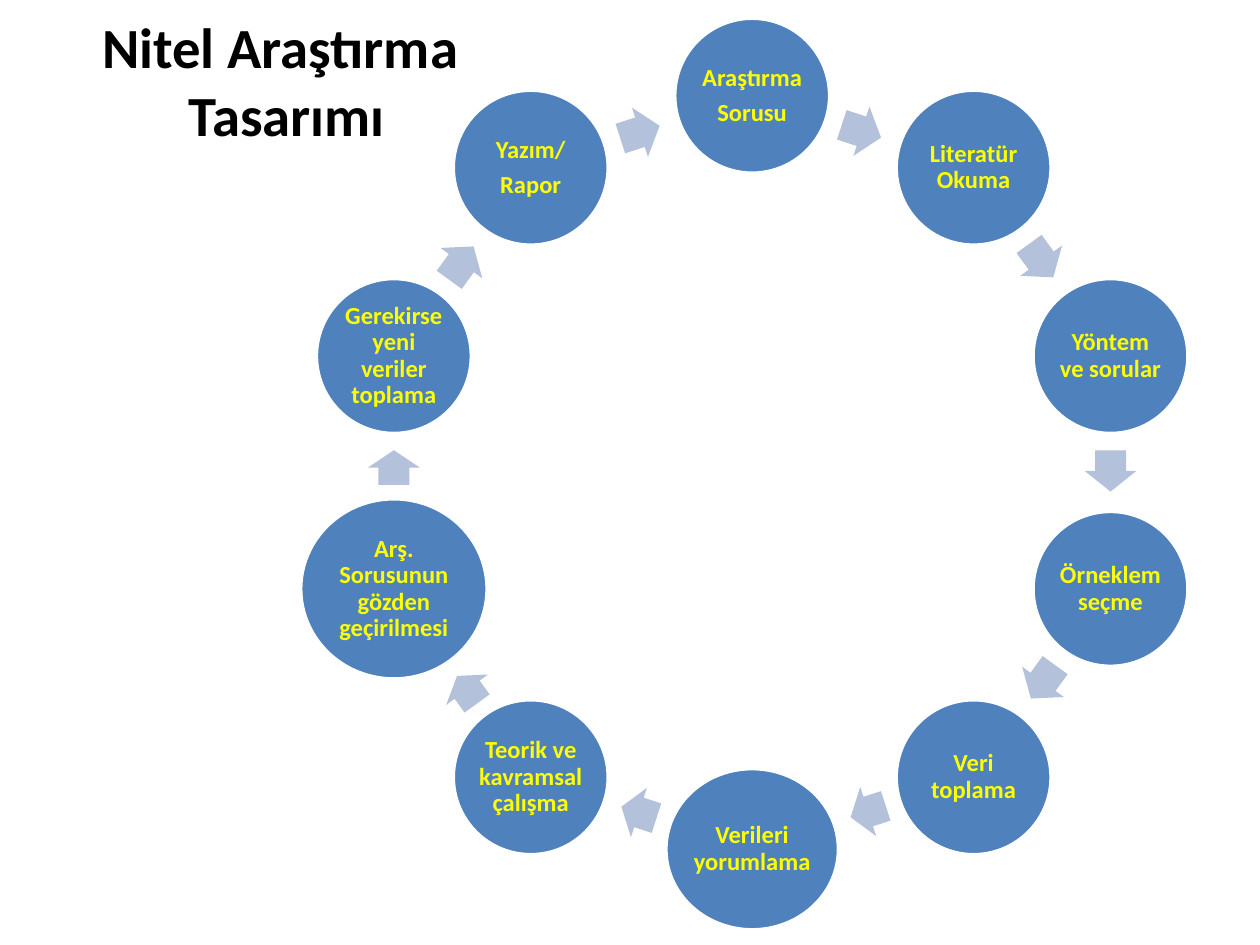
import math
from pptx import Presentation, util as u
from pptx.dml.color import RGBColor
from pptx.enum import shapes, text

COLORS = {"title": "000000", "node": "4F81BD", "rim": "FFFFFF",
          "label": "FFFF00", "arrow": "B3C1DB"}

prs = Presentation()
prs.slide_width, prs.slide_height = u.Inches(10), u.Inches(7.5)
W, H = prs.slide_width, prs.slide_height
s = prs.slides.add_slide(prs.slide_layouts[6])


def write(sp, paragraphs, inset, para_format, font_format, color):
    """Fill a shape with centred bold paragraphs, anchored in the middle."""
    tf = sp.text_frame
    frame = {"word_wrap": True, "vertical_anchor": text.MSO_ANCHOR.MIDDLE}
    for side in ("left", "right", "top", "bottom"):
        frame["margin_" + side] = u.Inches(inset)
    for name, value in frame.items():
        setattr(tf, name, value)
    tf.text = "\n".join(paragraphs)
    for p in tf.paragraphs:
        p.alignment = text.PP_ALIGN.CENTER
        for name, value in para_format.items():
            setattr(p, name, value)
        for r in p.runs:
            for name, value in {"name": "Calibri", "bold": True, **font_format}.items():
                setattr(r.font, name, value)
            r.font.color.rgb = RGBColor.from_string(COLORS[color])


def add_filled(kind, cx, cy, w, h, color):
    """Add a flat preset shape around its centre point."""
    sp = s.shapes.add_shape(kind, *(round(v) for v in (cx - w / 2, cy - h / 2, w, h)))
    sp.shadow.inherit = False
    sp.fill.solid()
    sp.fill.fore_color.rgb = RGBColor.from_string(COLORS[color])
    sp.line.fill.background()
    return sp


# Title
title = s.shapes.add_textbox(0, round(0.028 * H), round(0.455 * W), round(0.113 * H))
write(title, ["Nitel Araştırma \vTasarımı"], 0.05, {}, {"size": u.Pt(32.4)}, "title")

# Steps of the cycle, clockwise from the top: paragraphs, width and height
# as shares of the slide width
STEP = 0.123
steps = [
    (["Araştırma", "Sorusu"], STEP, STEP),
    (["Literatür Okuma"], STEP, STEP),
    (["Yöntem ve sorular"], STEP, STEP),
    (["Örneklem seçme"], STEP, STEP),
    (["Veri toplama"], STEP, STEP),
    (["Verileri yorumlama"], 0.137, 0.128),
    (["Teorik ve kavramsal çalışma"], STEP, STEP),
    (["Arş. Sorusunun gözden geçirilmesi"], 0.148, 0.143),
    (["Gerekirse yeni veriler toplama"], STEP, STEP),
    (["Yazım/", "Rapor"], STEP, STEP),
]
turn = 360 / len(steps)
ring_x, ring_y, radius = 0.597 * W, 0.5 * H, 0.299 * W
centers = [(ring_x + radius * math.sin(math.radians(i * turn)),
            ring_y - radius * math.cos(math.radians(i * turn)))
           for i in range(len(steps))]

for i, (label, w, h) in enumerate(steps):
    x, y = centers[i]
    node = add_filled(shapes.MSO_SHAPE.OVAL, x, y, w * W, h * W, "node")
    node.line.color.rgb = RGBColor.from_string(COLORS["rim"])
    node.line.width = u.Pt(2)
    write(node, label, 0.02, {"line_spacing": 0.9, "space_after": u.Pt(4.9)},
          {"size": u.Pt(14)}, "label")

    # The arrow fills about half the gap to the next step
    j = (i + 1) % len(steps)
    angle = (i + 0.5) * turn
    dx, dy = math.cos(math.radians(angle)), math.sin(math.radians(angle))
    reach, next_reach = (a * b * W / 2 / math.hypot(b * dx, a * dy)
                         for _, a, b in (steps[i], steps[j]))
    chord = math.dist(centers[i], centers[j])
    gap = chord - reach - next_reach
    along = reach + 0.48 * gap
    arrow = add_filled(shapes.MSO_SHAPE.RIGHT_ARROW, x + along * dx, y + along * dy,
                       0.53 * gap, 0.041 * W, "arrow")
    arrow.rotation = angle
    arrow.adjustments[0], arrow.adjustments[1] = 0.6, 0.5

prs.save("out.pptx")
